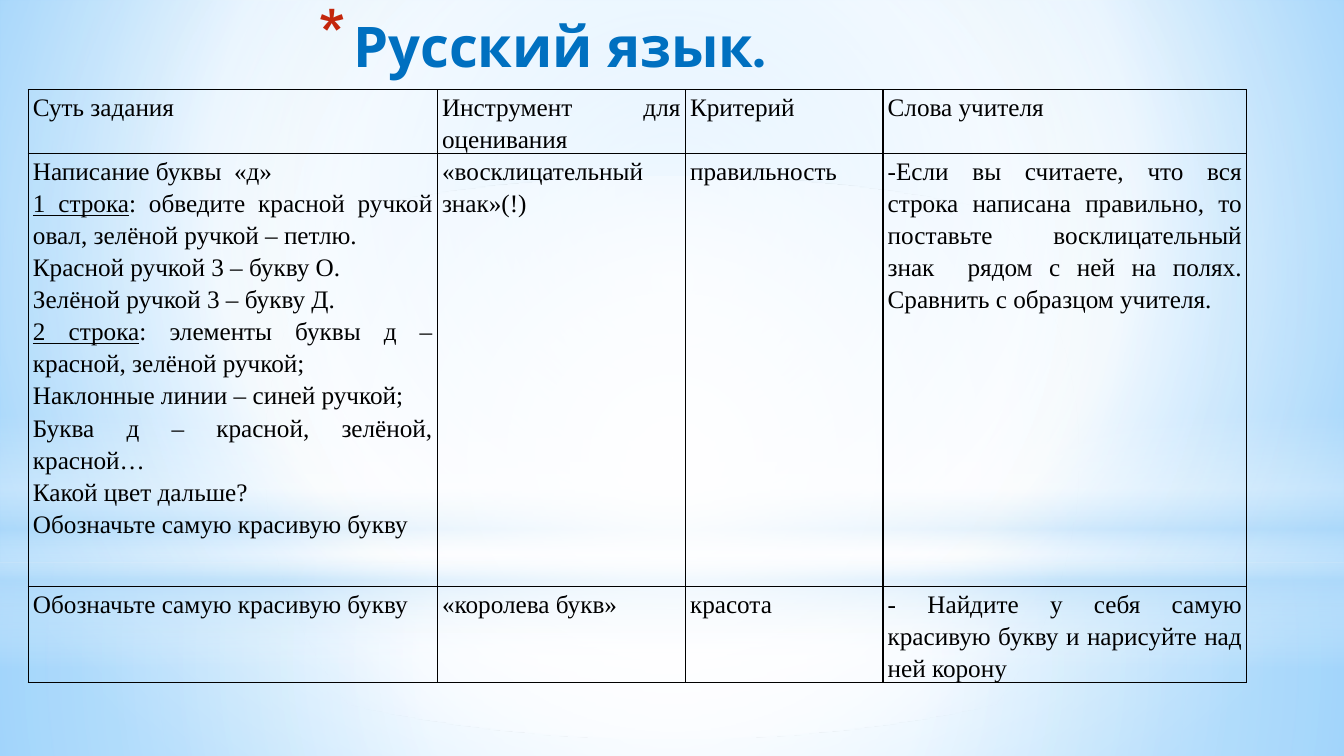
import pptx
import pptx.util
import pptx.dml.color
import pptx.enum.shapes
import pptx.enum.text
import pptx.oxml
import pptx.oxml.ns
from dataclasses import dataclass
from lxml import etree

Cm = pptx.util.Cm
Pt = pptx.util.Pt
qn = pptx.oxml.ns.qn

# Content: a cell is a list of paragraphs, a paragraph is (underlined start, rest)
HEADING = "Русский язык."
TASKS = [
    [
        [("", "Суть задания")],
        [("", "Инструмент для оценивания")],
        [("", "Критерий")],
        [("", "Слова учителя")],
    ],
    [
        [
            ("", "Написание буквы  «д»"),
            ("1 строка", ": обведите красной ручкой овал, зелёной ручкой – петлю."),
            ("", "Красной ручкой 3 – букву О."),
            ("", "Зелёной ручкой 3 – букву Д."),
            ("2 строка", ": элементы буквы д – красной, зелёной ручкой;"),
            ("", "Наклонные линии – синей ручкой;"),
            ("", "Буква д – красной, зелёной, красной…"),
            ("", "Какой цвет дальше?"),
            ("", "Обозначьте самую красивую букву"),
        ],
        [("", "«восклицательный знак»(!)")],
        [("", "правильность")],
        [("", "-Если вы считаете, что вся строка написана правильно, то поставьте  "
              "восклицательный знак  рядом с ней на полях. Сравнить с образцом учителя.")],
    ],
    [
        [("", "Обозначьте самую красивую букву")],
        [("", "«королева букв»")],
        [("", "красота")],
        [("", "- Найдите у себя самую красивую букву и нарисуйте над ней корону")],
    ],
]
COLUMN_WIDTHS = [10.31, 6.25, 4.98, 9.17]
ROW_HEIGHTS = [1.22, 10.9, 2.41]


@dataclass
class Theme:
    heading_font: str = "Karla"
    heading_size: int = 40
    heading_color: str = "0070C0"
    bullet_color: str = "C3260C"
    body_font: str = "Times New Roman"
    body_size: int = 18
    ink: str = "000000"
    white: str = "FFFFFF"
    mist: str = "B4DCFA"
    sky: str = "9ED5FF"
    deep_sky: str = "5BB9FF"


theme = Theme()
WIDTH, HEIGHT, HORIZON = 33.87, 19.05, 14.17
CENTRE = (50, 50, 50, 50)

# Gradient stops are (position %, colour, opacity %)
BACKGROUND = [(0, theme.sky, 100), (60, theme.white, 100), (100, theme.deep_sky, 100)]
RECTANGLE = pptx.enum.shapes.MSO_SHAPE.RECTANGLE
OVAL = pptx.enum.shapes.MSO_SHAPE.OVAL
# Backdrop layers: preset, top, height, stops, focus (None means top to bottom)
LAYERS = [
    (RECTANGLE, HORIZON, HEIGHT - HORIZON,
     [(0, theme.white, 91), (37, theme.white, 76), (100, theme.mist, 79)], CENTRE),
    (RECTANGLE, 0, HORIZON,
     [(0, theme.white, 89), (48, theme.white, 62), (100, theme.mist, 79)], CENTRE),
    (RECTANGLE, 10.46, 6.35,
     [(0, theme.white, 0), (29, theme.white, 30), (45, theme.mist, 40),
      (55, theme.white, 26), (65, theme.mist, 60), (100, theme.white, 0)], None),
    (OVAL, 4.45, HORIZON, [(0, theme.white, 100), (56, theme.white, 0)], CENTRE),
]


def rgb(color):
    return pptx.dml.color.RGBColor.from_string(color)


def add(parent, tag, **attributes):
    return etree.SubElement(parent, qn(tag), {k: str(v) for k, v in attributes.items()})


def paint_gradient(fill, holder, stops, focus):
    fill.gradient()
    gradient = holder.find(".//" + qn("a:gradFill"))
    for child in list(gradient):
        gradient.remove(child)
    stop_list = add(gradient, "a:gsLst")
    for position, color, opacity in stops:
        stop = add(stop_list, "a:gs", pos=position * 1000)
        add(add(stop, "a:srgbClr", val=color), "a:alpha", val=opacity * 1000)
    if focus:
        circle = add(gradient, "a:path", path="circle")
        add(circle, "a:fillToRect", **{side: v * 1000 for side, v in zip("ltrb", focus)})
    else:
        add(gradient, "a:lin", ang=90 * 60000, scaled=0)


def style_run(run, font, size, color):
    run.font.name = font
    run.font.size = Pt(size)
    run.font.color.rgb = rgb(color)


def add_borders(cell):
    properties = cell._tc.get_or_add_tcPr()
    for index, side in enumerate(("a:lnL", "a:lnR", "a:lnT", "a:lnB")):
        border = add(properties, side, w=Pt(1))
        add(add(border, "a:solidFill"), "a:srgbClr", val=theme.ink)
        properties.insert(index, border)


def fill_cell(cell, paragraphs):
    cell.margin_left = cell.margin_right = Cm(0.12)
    cell.margin_top = cell.margin_bottom = 0
    cell.fill.background()
    add_borders(cell)
    cell.text_frame.text = "\n".join(start + rest for start, rest in paragraphs)
    for paragraph, (start, rest) in zip(cell.text_frame.paragraphs, paragraphs):
        paragraph.alignment = pptx.enum.text.PP_ALIGN.JUSTIFY
        paragraph.line_spacing = 1.15
        if start:
            paragraph.runs[0].text = start
            paragraph.runs[0].font.underline = True
            paragraph.add_run().text = rest
        for run in paragraph.runs:
            style_run(run, theme.body_font, theme.body_size, theme.ink)


def add_backdrop(slide):
    paint_gradient(slide.background.fill, slide._element, BACKGROUND, (20, 10, 20, 60))
    for preset, top, height, stops, focus in LAYERS:
        layer = slide.shapes.add_shape(preset, 0, Cm(top), Cm(WIDTH), Cm(height))
        layer.shadow.inherit = False
        layer.line.fill.background()
        paint_gradient(layer.fill, layer._element, stops, focus)


def add_heading(slide):
    heading = slide.shapes.title
    slide.shapes._spTree.append(heading._element)  # in front of the backdrop
    heading.left, heading.top = Cm(1.57), 0
    heading.width, heading.height = Cm(24.18), Cm(2.26)
    frame = heading.text_frame
    frame.text = HEADING
    frame.auto_size = pptx.enum.text.MSO_AUTO_SIZE.NONE
    frame.vertical_anchor = pptx.enum.text.MSO_ANCHOR.MIDDLE
    paragraph = frame.paragraphs[0]
    paragraph.alignment = pptx.enum.text.PP_ALIGN.CENTER
    style_run(paragraph.runs[0], theme.heading_font, theme.heading_size, theme.heading_color)
    paragraph.runs[0].font.bold = True
    # Star bullet with a hanging indent
    properties = paragraph._p.get_or_add_pPr()
    properties.set("marL", str(Cm(0.89)))
    properties.set("indent", str(-Cm(0.89)))
    add(add(properties, "a:buClr"), "a:srgbClr", val=theme.bullet_color)
    add(properties, "a:buSzPct", val=128000)
    add(properties, "a:buChar", char="*")


def add_tasks(slide):
    frame = slide.shapes.add_table(
        len(TASKS), len(COLUMN_WIDTHS), Cm(0.71), Cm(2.26),
        Cm(sum(COLUMN_WIDTHS)), Cm(sum(ROW_HEIGHTS)))
    tasks = frame.table
    tasks.first_row = tasks.horz_banding = False
    for column, width in zip(tasks.columns, COLUMN_WIDTHS):
        column.width = Cm(width)
    for row, height, texts in zip(tasks.rows, ROW_HEIGHTS, TASKS):
        row.height = Cm(height)
        for cell, paragraphs in zip(row.cells, texts):
            fill_cell(cell, paragraphs)


def main():
    deck = pptx.Presentation()
    deck.slide_width, deck.slide_height = Cm(WIDTH), Cm(HEIGHT)
    slide = deck.slides.add_slide(deck.slide_layouts[5])
    add_backdrop(slide)
    add_heading(slide)
    add_tasks(slide)
    deck.save("out.pptx")


if __name__ == "__main__":
    main()
